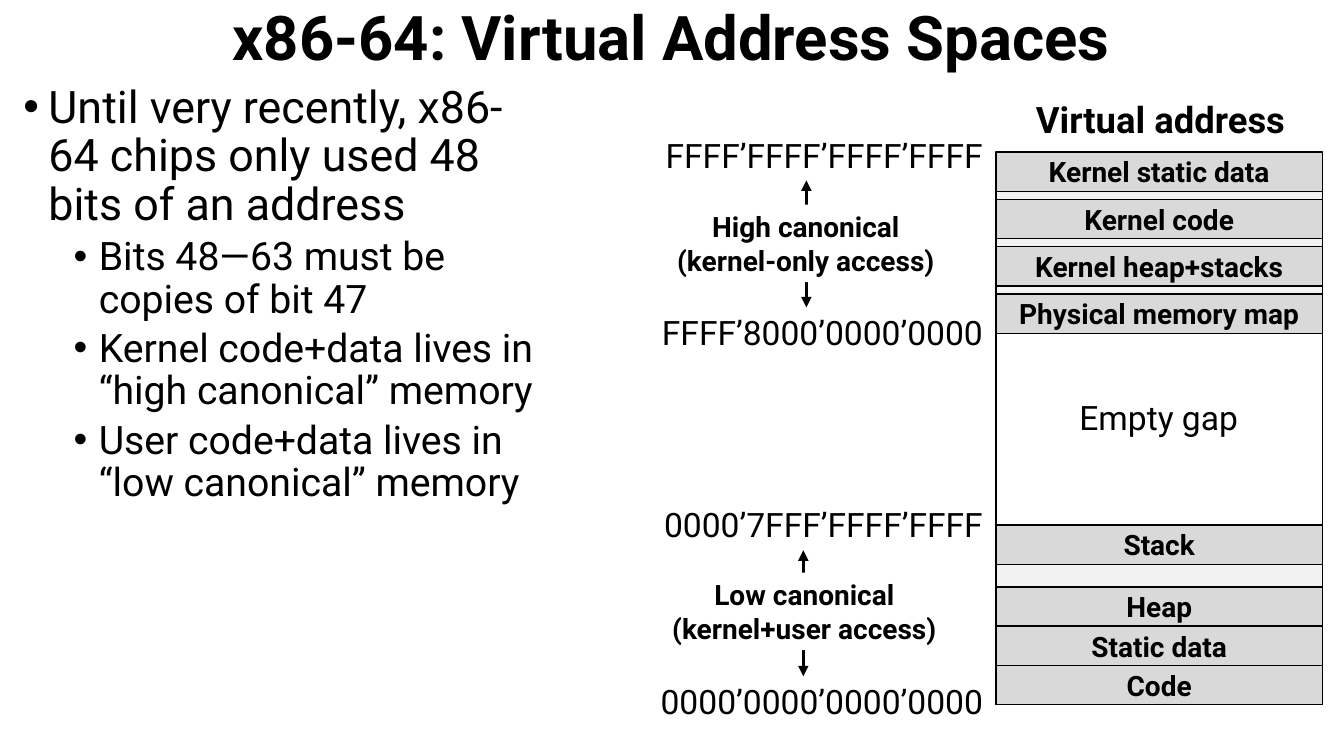
from lxml import etree
from pptx import Presentation
from pptx.dml.color import RGBColor
from pptx.enum.shapes import MSO_CONNECTOR, MSO_SHAPE
from pptx.enum.text import MSO_ANCHOR, MSO_AUTO_SIZE, PP_ALIGN
from pptx.oxml.ns import qn
from pptx.util import Pt

BLACK = RGBColor(0x00, 0x00, 0x00)
WHITE = RGBColor(0xFF, 0xFF, 0xFF)
LIGHT_GRAY = RGBColor(0xF2, 0xF2, 0xF2)
GRAY = RGBColor(0xD9, 0xD9, 0xD9)
FONT = "Roboto"
CENTER, RIGHT = PP_ALIGN.CENTER, PP_ALIGN.RIGHT
MIDDLE, TOP = MSO_ANCHOR.MIDDLE, MSO_ANCHOR.TOP
NO_AUTOFIT = MSO_AUTO_SIZE.NONE
RECTANGLE = MSO_SHAPE.RECTANGLE
STRAIGHT = MSO_CONNECTOR.STRAIGHT

# Address space column
COLUMN_LEFT, COLUMN_WIDTH = 711.4, 233.3
BAND_HEIGHT = 28
KERNEL_TOP, KERNEL_PITCH = 108.7, 33.8
USER_TOP, USER_BOTTOM = 375.1, 503.3
LABEL_LEFT, LABEL_WIDTH = 442.1, 267.1

REGIONS = [  # top, bottom, fill
    (110.2, 238, LIGHT_GRAY),
    (238, USER_TOP, WHITE),
    (USER_TOP, USER_BOTTOM, LIGHT_GRAY),
]
KERNEL_BANDS = ["Kernel static data", "Kernel code",
                "Kernel heap+stacks", "Physical memory map"]
USER_BANDS_UPWARD = ["Code", "Static data", "Heap"]
ADDRESSES = [
    (92.9, "FFFF’FFFF’FFFF’FFFF"),
    (219.6, "FFFF’8000’0000’0000"),
    (356.4, "0000’7FFF’FFFF’FFFF"),
    (483.1, "0000’0000’0000’0000"),
]
RANGES = [  # arrow x, arrow top, arrow bottom, label left, top, width, text
    (576, 128.9, 219.6, 442.1, 146.2, 267.1,
     "High canonical\n(kernel-only access)"),
    (573.8, 393.1, 483.1, 452.9, 409, 243.4,
     "Low canonical\n(kernel+user access)"),
]
BULLETS = [  # level, text
    (0, "Until very recently, x86-64 chips only used 48 bits of an address"),
    (1, "Bits 48—63 must be copies of bit 47"),
    (1, "Kernel code+data lives in “high canonical” memory"),
    (1, "User code+data lives in “low canonical” memory"),
]


def place(shape, left, top, width, height):
    shape.left, shape.top = Pt(left), Pt(top)
    shape.width, shape.height = Pt(width), Pt(height)


def format_runs(paragraph, size, bold=False):
    for run in paragraph.runs:
        run.font.name = FONT
        run.font.size = Pt(size)
        run.font.bold = bold
        run.font.color.rgb = BLACK


def set_text(shape, text, size, bold=False, align=CENTER, anchor=TOP):
    frame = shape.text_frame
    frame.text = text
    frame.word_wrap = True
    frame.auto_size = NO_AUTOFIT
    frame.vertical_anchor = anchor
    for paragraph in frame.paragraphs:
        paragraph.alignment = align
        format_runs(paragraph, size, bold)


def add_label(slide, left, top, width, height, text, size,
              bold=False, align=CENTER):
    label = slide.shapes.add_textbox(Pt(left), Pt(top), Pt(width), Pt(height))
    set_text(label, text, size, bold, align)
    return label


def add_block(slide, top, height, color):
    block = slide.shapes.add_shape(
        RECTANGLE, Pt(COLUMN_LEFT), Pt(top), Pt(COLUMN_WIDTH), Pt(height))
    block.shadow.inherit = False
    block.fill.solid()
    block.fill.fore_color.rgb = color
    block.line.color.rgb = BLACK
    block.line.width = Pt(1)
    return block


def add_band(slide, top, text):
    band = add_block(slide, top, BAND_HEIGHT, GRAY)
    set_text(band, text, 20, bold=True, anchor=MIDDLE)


def add_double_arrow(slide, x, top, bottom):
    arrow = slide.shapes.add_connector(
        STRAIGHT, Pt(x), Pt(top), Pt(x), Pt(bottom))
    arrow.line.color.rgb = BLACK
    arrow.line.width = Pt(2.5)
    line = arrow.line._get_or_add_ln()
    for end in ("a:headEnd", "a:tailEnd"):
        etree.SubElement(line, qn(end), type="triangle")
    etree.SubElement(arrow._element.spPr, qn("a:effectLst"))


def add_bullet(paragraph, level, text):
    paragraph.text = text
    paragraph.level = level
    paragraph.line_spacing = 0.9
    properties = paragraph._p.get_or_add_pPr()
    properties.set("marL", str(Pt(18 + 36 * level)))
    properties.set("indent", str(Pt(-18)))
    etree.SubElement(properties, qn("a:buFont"), typeface="Arial")
    etree.SubElement(properties, qn("a:buChar"), char="•")
    format_runs(paragraph, 28 if level else 32)


def fill_placeholders(slide):
    title = slide.shapes.title
    place(title, 49.7, -5.8, 860.4, 69.1)
    set_text(title, "x86-64: Virtual Address Spaces", 44, True, anchor=MIDDLE)
    title.text_frame.paragraphs[0].line_spacing = 0.9

    body = slide.placeholders[1]
    place(body, 9.4, 56.9, 389.5, 478.1)
    frame = body.text_frame
    frame.auto_size = NO_AUTOFIT
    for index, (level, text) in enumerate(BULLETS):
        paragraph = frame.add_paragraph() if index else frame.paragraphs[0]
        paragraph.space_before = Pt(5 if index else 0)
        add_bullet(paragraph, level, text)


def main():
    presentation = Presentation()
    presentation.slide_width, presentation.slide_height = Pt(960), Pt(540)
    slide = presentation.slides.add_slide(presentation.slide_layouts[1])
    fill_placeholders(slide)

    # Background regions of the address space
    for top, bottom, color in REGIONS:
        add_block(slide, top, bottom - top, color)

    # Heading and boundary addresses
    add_label(slide, 700.6, 66.2, 257, 38.9, "Virtual address", 26, True)
    for top, address in ADDRESSES:
        add_label(slide, LABEL_LEFT, top, LABEL_WIDTH, 36, address, 24,
                  align=RIGHT)

    # Canonical ranges: each label covers the middle of its arrow
    for x, arrow_top, arrow_bottom, left, top, width, text in RANGES:
        add_double_arrow(slide, x, arrow_top, arrow_bottom)
        label = add_label(slide, left, top, width, 55.4, text, 20, True)
        label.fill.solid()
        label.fill.fore_color.rgb = WHITE

    # Memory bands
    for index, text in enumerate(KERNEL_BANDS):
        add_band(slide, KERNEL_TOP + index * KERNEL_PITCH, text)
    add_band(slide, USER_TOP, "Stack")
    for index, text in enumerate(USER_BANDS_UPWARD, start=1):
        add_band(slide, USER_BOTTOM - index * BAND_HEIGHT, text)
    add_label(slide, 734.4, 280.1, 186.5, 36, "Empty gap", 24)

    presentation.save("out.pptx")


if __name__ == "__main__":
    main()
